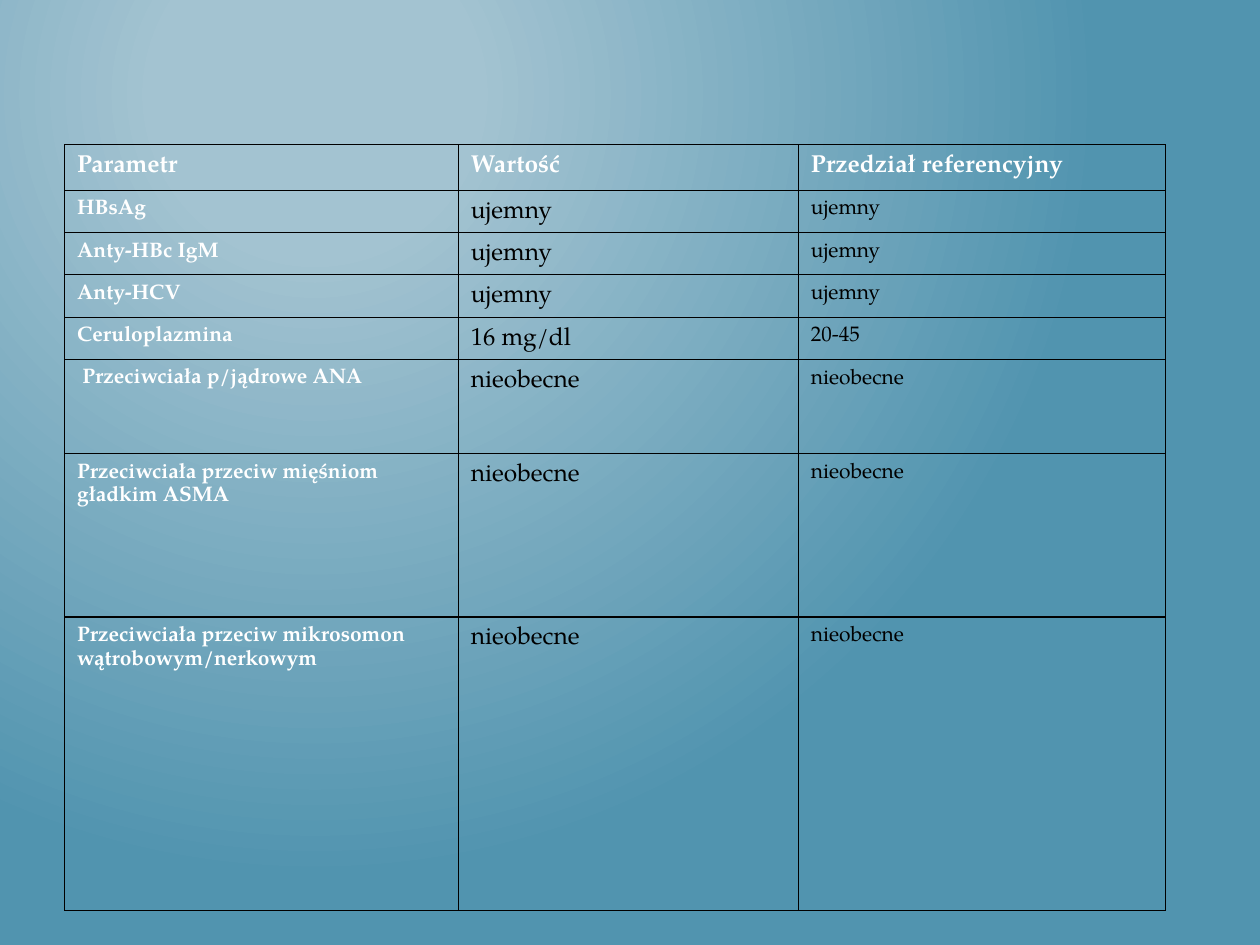
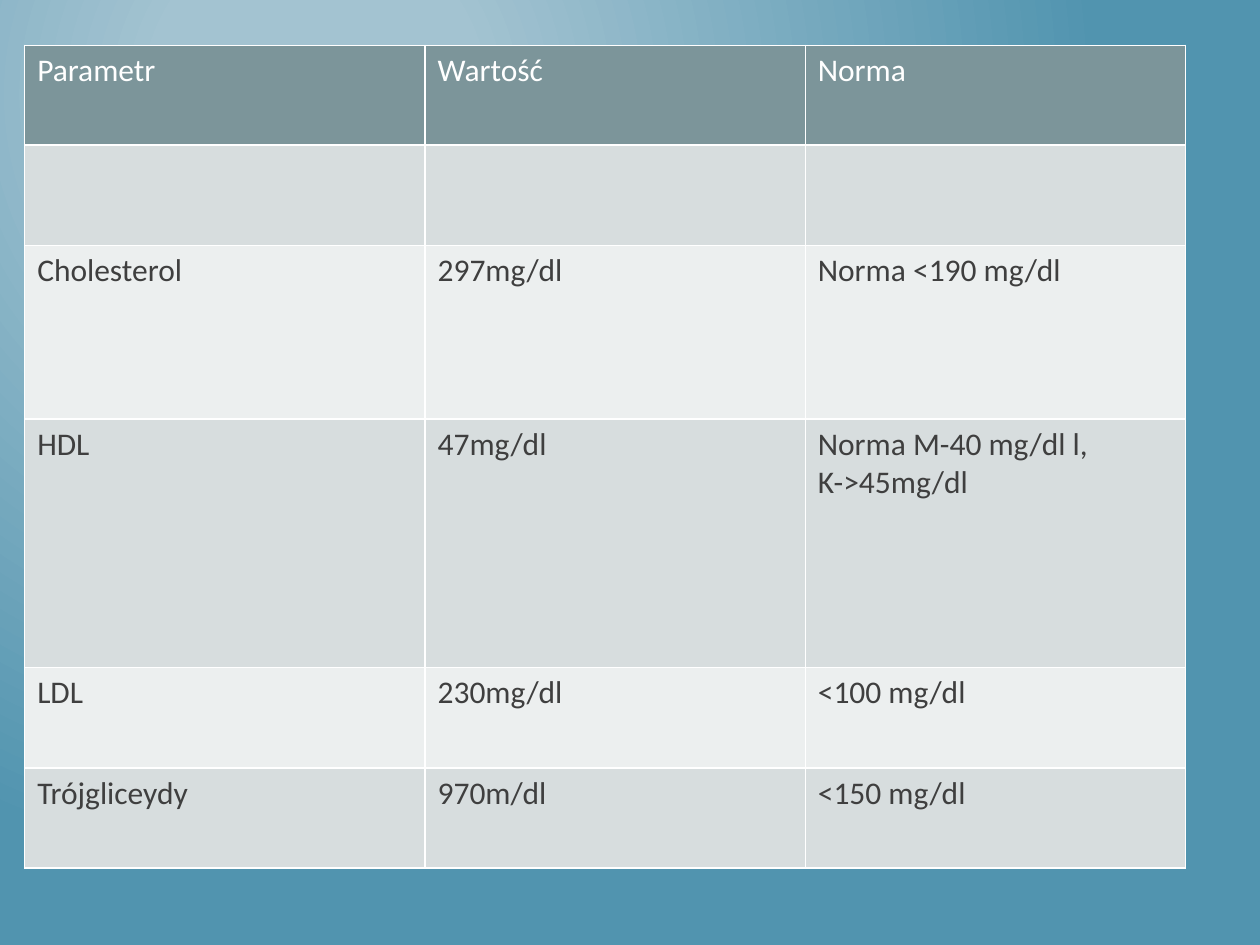
import pptx
import pptx.dml.color
import pptx.oxml
import pptx.oxml.ns
import pptx.util

Pt = pptx.util.Pt
qn = pptx.oxml.ns.qn

COLOURS = {
    "glow": "A3C3D1",
    "sea": "5194AF",
    "white": "FFFFFF",
    "black": "000000",
    "ink": "3F3F3F",
    "header": "7C959A",
    "dark band": "D7DDDE",
    "light band": "ECEFEF",
}
DRAWING = pptx.oxml.ns.nsdecls("a")


def colour(name):
    return pptx.dml.color.RGBColor.from_string(COLOURS[name])


def write_text(frame, text, font, size, ink, bold=False, spacing=None):
    frame.text = text
    for para in frame.paragraphs:
        para.line_spacing = spacing
        para.font.size = Pt(size)
        for span in para.runs:
            span.font.name = font
            span.font.size = Pt(size)
            span.font.bold = bold
            span.font.color.rgb = colour(ink)


class LabDeck:
    def __init__(self):
        self.deck = pptx.Presentation()
        self.deck.slide_width, self.deck.slide_height = Pt(720), Pt(540)
        self.page = None
        self.paint_background()

    def paint_background(self):
        master = self.deck.slide_master
        fill = master.background.fill
        fill.gradient()
        stops = zip(fill.gradient_stops, ("glow", "sea"), (0.2, 1))
        for stop, name, position in stops:
            stop.color.rgb = colour(name)
            stop.position = position
        gradient = next(master.element.iter(qn("a:gradFill")))
        circle = pptx.oxml.parse_xml(
            f'<a:path {DRAWING} path="circle"><a:fillToRect l="50000" '
            't="20000" r="100000" b="100000"/></a:path>')
        gradient.replace(gradient.find(qn("a:lin")), circle)

    def new_page(self):
        self.page = self.deck.slides.add_slide(self.deck.slide_layouts[6])

    def border(self, cell, name, width):
        properties = cell._tc.get_or_add_tcPr()
        for index, side in enumerate("LRTB"):
            line = pptx.oxml.parse_xml(
                f'<a:ln{side} {DRAWING} w="{Pt(width)}"><a:solidFill>'
                f'<a:srgbClr val="{COLOURS[name]}"/></a:solidFill></a:ln{side}>')
            properties.insert(index, line)

    def table(self, left, top, widths, heights, rows, style, line, line_width):
        table = self.page.shapes.add_table(
            len(rows), len(widths), Pt(left), Pt(top),
            Pt(sum(widths)), Pt(sum(heights))).table
        for column, width in zip(table.columns, widths):
            column.width = Pt(width)
        for row, height in zip(table.rows, heights):
            row.height = Pt(height)
        for i, row in enumerate(rows):
            for j, text in enumerate(row):
                cell = table.cell(i, j)
                band, text_format = style(i, j)
                if band:
                    cell.fill.solid()
                    cell.fill.fore_color.rgb = colour(band)
                else:
                    cell.fill.background()
                self.border(cell, line, line_width)
                write_text(cell.text_frame, text, **text_format)


def serology_style(row, column):
    strong = row == 0 or column == 0
    return None, dict(
        font="TeX Gyre Pagella", size=14 if row == 0 or column == 1 else 12,
        ink="white" if strong else "black", bold=strong, spacing=1.15)


def lipid_style(row, column):
    if row == 0:
        band = "header"
    else:
        band = "dark band" if row % 2 else "light band"
    return band, dict(font="Calibri", size=18, ink="ink" if row else "white")


SEROLOGY = [
    ("Parametr", "Wartość", "Przedział referencyjny"),
    ("HBsAg", "ujemny", "ujemny"),
    ("Anty-HBc IgM", "ujemny", "ujemny"),
    ("Anty-HCV", "ujemny", "ujemny"),
    ("Ceruloplazmina", "16 mg/dl", "20-45"),
    (" Przeciwciała p/jądrowe ANA", "nieobecne", "nieobecne"),
    ("Przeciwciała przeciw mięśniom gładkim ASMA", "nieobecne", "nieobecne"),
    ("Przeciwciała przeciw mikrosomon wątrobowym/nerkowym",
     "nieobecne", "nieobecne"),
]
LIPIDS = [
    ("Parametr", "Wartość", "Norma"),
    ("", "", ""),
    ("Cholesterol", "297mg/dl", "Norma <190 mg/dl"),
    ("HDL", "47mg/dl", "Norma M-40 mg/dl l,\nK->45mg/dl"),
    ("LDL", "230mg/dl", "<100 mg/dl"),
    ("Trójgliceydy", "970m/dl", "<150 mg/dl"),
]


def main():
    lab = LabDeck()
    lab.new_page()
    lab.table(36.9, 82.7, (225, 194.3, 209.7),
              (26, *[24.2] * 4, 53.8, 93.4, 167.7),
              SEROLOGY, serology_style, "black", 0.75)
    lab.new_page()
    lab.table(14.1, 26, (228.8, 217.3, 217.3),
              (56.9, 57.4, 99.1, 142, 57.4, 57.4),
              LIPIDS, lipid_style, "white", 1)
    lab.deck.save("out.pptx")


if __name__ == "__main__":
    main()
